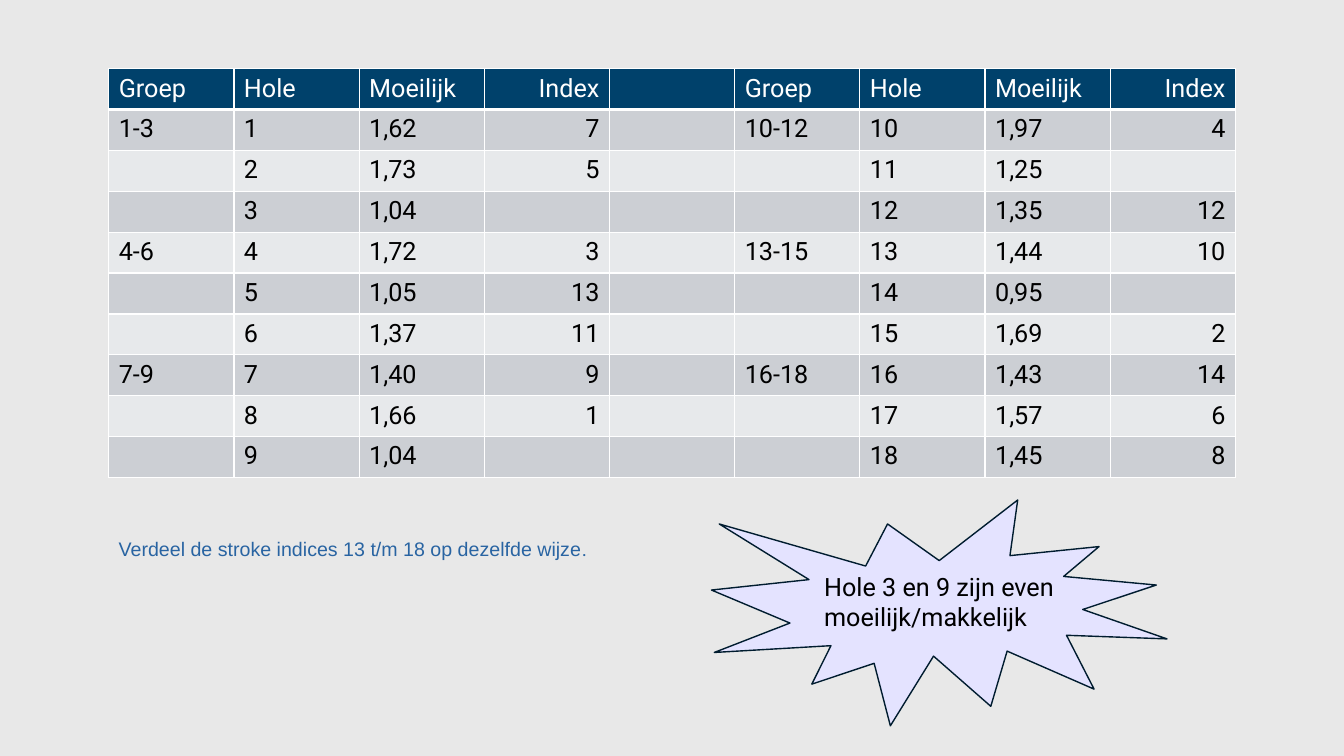
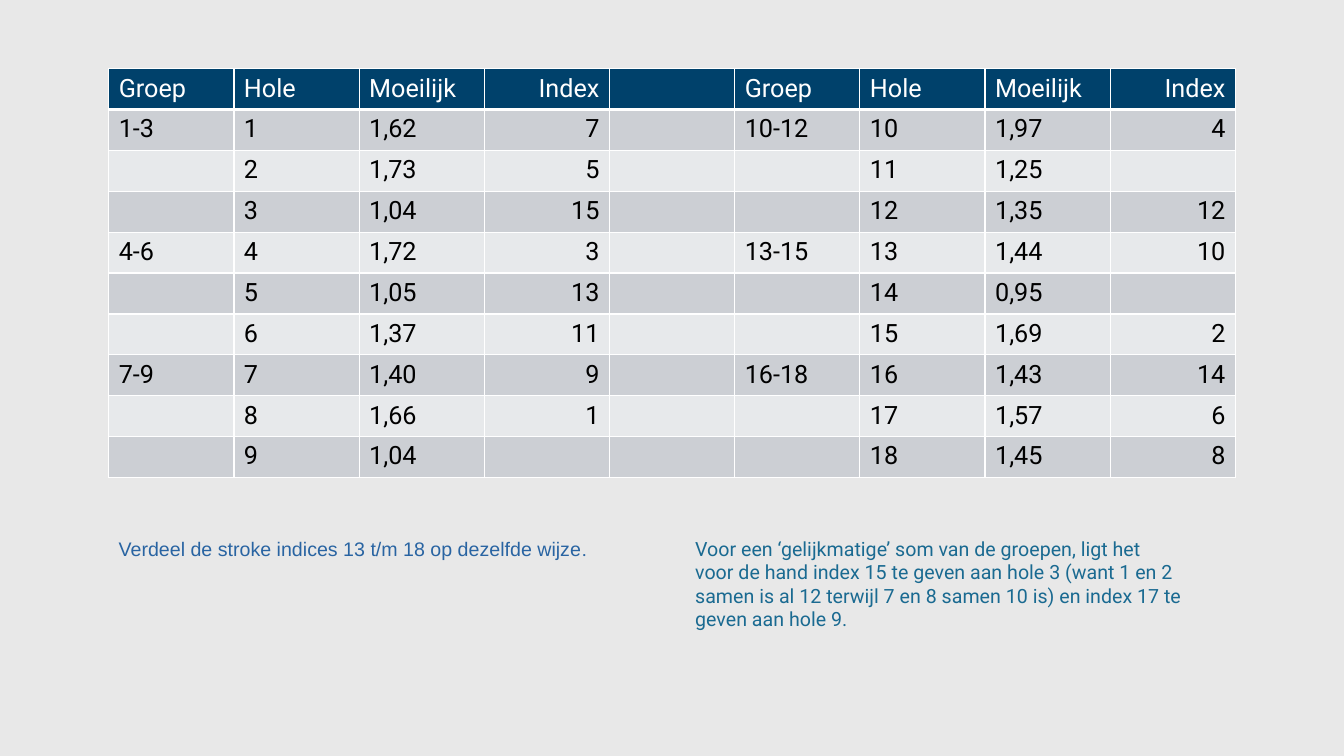
from lxml.etree import SubElement as Sub
from pptx import Presentation
from pptx.dml.color import RGBColor as RGB
from pptx.enum.shapes import MSO_SHAPE as Shape
from pptx.enum.text import PP_ALIGN as Align
from pptx.oxml.ns import qn
from pptx.util import Cm, Pt

# Colours
PAPER = RGB(0xE8, 0xE8, 0xE8)
NAVY = RGB(0x00, 0x41, 0x6B)
DARK = RGB(0xCC, 0xCF, 0xD4)
LIGHT = RGB(0xE7, 0xE9, 0xEB)
WHITE = RGB(0xFF, 0xFF, 0xFF)
BLACK = RGB(0x00, 0x00, 0x00)
BLUE = RGB(0x29, 0x64, 0xA2)
TEAL = RGB(0x1A, 0x6A, 0x91)
LILAC = RGB(0xE4, 0xE3, 0xFF)
INK = RGB(0x00, 0x1C, 0x2F)

# Course data: difficulty of holes 1 to 18, stroke index by hole
HEADS = ["Groep", "Hole", "Moeilijk", "Index"]
LEVELS = ["1,62", "1,73", "1,04", "1,72", "1,05", "1,37", "1,40", "1,66", "1,04",
          "1,97", "1,25", "1,35", "1,44", "0,95", "1,69", "1,43", "1,57", "1,45"]
FIRST = {1: 7, 2: 5, 4: 3, 5: 13, 6: 11, 7: 9, 8: 1, 10: 4,
         12: 12, 13: 10, 15: 2, 16: 14, 17: 6, 18: 8}
STAGES = [FIRST, {**FIRST, 3: 15}]
ROWS, COLS = 10, 9


def write(frame, text, size=18, font="Roboto", color=BLACK, align=Align.LEFT):
    """Add a run to the first paragraph of a text frame."""
    frame.word_wrap = True
    para = frame.paragraphs[0]
    para.alignment = align
    run = para.add_run()
    run.text = text
    run.font.size = Pt(size)
    run.font.name = font
    run.font.bold = False
    run.font.color.rgb = color


def edge(cell, side, width):
    """Draw one white border of a table cell."""
    line = Sub(cell._tc.get_or_add_tcPr(), qn("a:" + side), w=str(Pt(width)))
    Sub(Sub(line, qn("a:solidFill")), qn("a:srgbClr"), val=str(WHITE))


deck = Presentation()
deck.slide_width, deck.slide_height = Cm(33.87), Cm(19.05)
back = deck.slide_master.background.fill
back.solid()
back.fore_color.rgb = PAPER

# Both slides: table and task
slides = []
for marks in STAGES:
    slide = deck.slides.add_slide(deck.slide_layouts[6])
    slides.append(slide)

    # Front nine on the left, back nine on the right, empty column between
    grid = [HEADS + [""] + HEADS]
    for row in range(1, ROWS):
        halves = []
        for hole in (row, row + 9):
            group = f"{hole}-{hole + 2}" if hole % 3 == 1 else ""
            halves.append([group, str(hole), LEVELS[hole - 1], str(marks.get(hole, ""))])
        grid.append(halves[0] + [""] + halves[1])

    table = slide.shapes.add_table(ROWS, COLS, Cm(2.74), Cm(1.73), Cm(28.4), Cm(10.3)).table
    for r, texts in enumerate(grid):
        for c, text in enumerate(texts):
            cell = table.cell(r, c)
            for side in ("lnL", "lnR", "lnT", "lnB"):
                thick = (r, side) in [(0, "lnB"), (1, "lnT")]
                edge(cell, side, 3 if thick else 1)
            cell.fill.solid()
            cell.fill.fore_color.rgb = NAVY if r == 0 else DARK if r % 2 else LIGHT
            if text:
                write(cell.text_frame, text, color=BLACK if r else WHITE,
                      align=Align.RIGHT if c in (3, 8) else Align.LEFT)

    task = slide.shapes.add_textbox(Cm(2.74), Cm(13.4), Cm(28.4), Cm(0.86)).text_frame
    write(task, "Verdeel de stroke indices 13 t/m 18 op dezelfde wijze",
          size=14, font="Arial", color=BLUE)
    write(task, ".", size=14, color=BLUE)

# First slide: burst with remark
shapes = slides[0].shapes
burst = shapes.add_shape(Shape.EXPLOSION1, Cm(17.93), Cm(12.6), Cm(11.48), Cm(5.69))
burst.shadow.inherit = False
burst.fill.solid()
burst.fill.fore_color.rgb = LILAC
burst.line.color.rgb = INK
burst.line.width = Pt(1)
remark = shapes.add_textbox(Cm(20.52), Cm(14.27), Cm(6.76), Cm(1.8))
write(remark.text_frame, "Hole 3 en 9 zijn even moeilijk/makkelijk")

# Second slide: reasoning
reason = slides[1].shapes.add_textbox(Cm(17.27), Cm(13.4), Cm(12.78), Cm(2.64))
write(reason.text_frame,
      "Voor een ‘gelijkmatige’ som van de groepen, ligt het voor de hand "
      "index 15 te geven aan hole 3 (want 1 en 2 samen is al 12 terwijl "
      "7 en 8 samen 10 is) en index 17 te geven aan hole 9.",
      size=14, color=TEAL)

deck.save("out.pptx")
